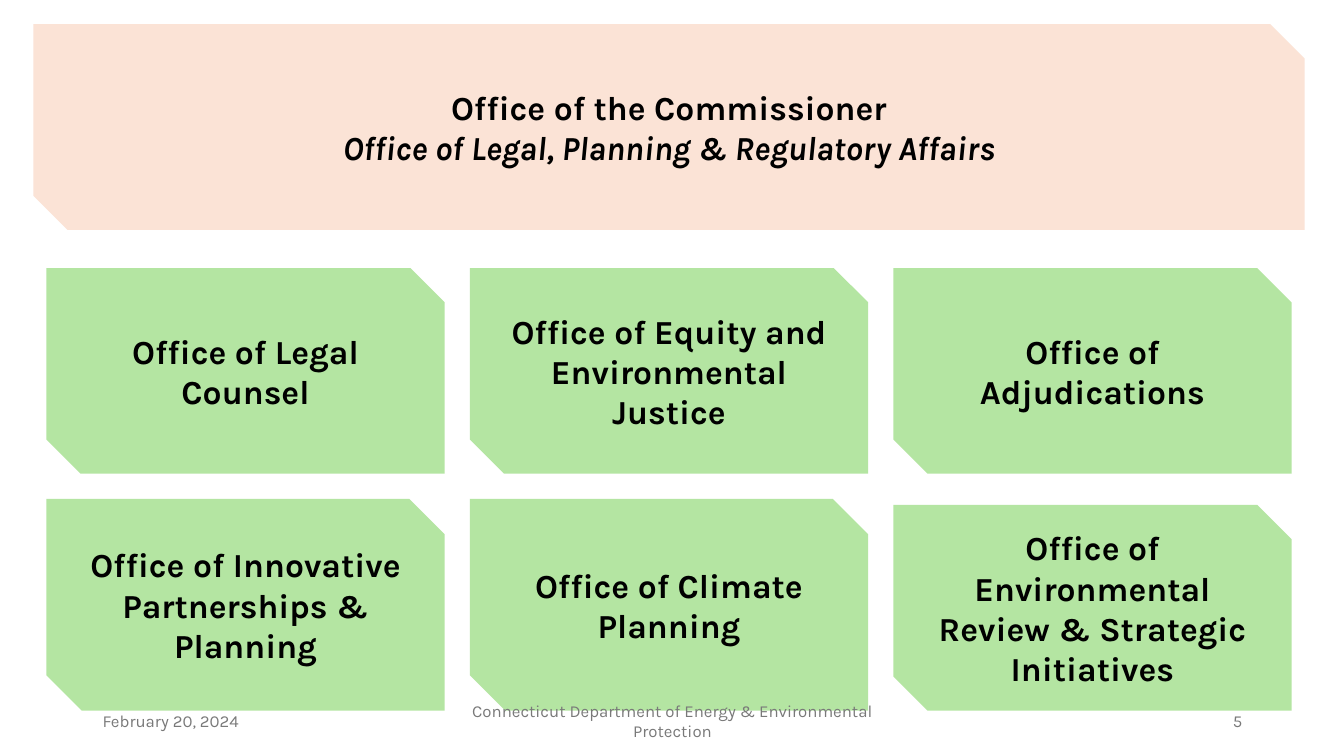
"""Build the organisation slide of the Commissioner's offices."""
from typing import NamedTuple

from pptx import Presentation
from pptx import util as u
from pptx.dml.color import RGBColor
from pptx.enum import shapes, text

PX = 9144
PEACH = RGBColor(0xFB, 0xE3, 0xD6)
GREEN = RGBColor(0xB4, 0xE5, 0xA2)
BLACK = RGBColor(0x00, 0x00, 0x00)
GREY = RGBColor(0x79, 0x79, 0x79)
FONT = "Karla"

COLUMN_LEFT, COLUMN_STEP, OFFICE_WIDTH = 46, 420, 395
FOOTER_TOP, FOOTER_HEIGHT = 695, 40


class Area(NamedTuple):
    left: int
    top: int
    width: int
    height: int

    def emu(self) -> list[u.Emu]:
        return [u.Emu(length * PX) for length in self]


class Office(NamedTuple):
    label: str
    column: int
    top: int
    height: int = 204


class FooterItem(NamedTuple):
    label: str
    left: int
    width: int
    align: text.PP_ALIGN


OFFICES = [
    Office("Office of Legal Counsel", 0, 266),
    Office("Office of Equity and Environmental Justice", 1, 266),
    Office("Office of Adjudications", 2, 266),
    Office("Office of Innovative Partnerships & Planning", 0, 495, 210),
    Office("Office of Climate Planning", 1, 495, 210),
    Office("Office of Environmental Review & Strategic Initiatives", 2, 501),
]

FOOTER = [
    FooterItem("February 20, 2024", 92, 300, text.PP_ALIGN.LEFT),
    FooterItem("Connecticut Department of Energy & Environmental Protection",
               442, 450, text.PP_ALIGN.CENTER),
    FooterItem("5", 942, 300, text.PP_ALIGN.RIGHT),
]


def write(paragraph, label: str, *, size: int = 24, color: RGBColor = BLACK,
          bold: bool = True, italic: bool = False,
          align: text.PP_ALIGN = text.PP_ALIGN.CENTER) -> None:
    paragraph.alignment = align
    run = paragraph.add_run()
    run.text = label
    run.font.name = FONT
    run.font.size = u.Pt(size)
    run.font.bold = bold
    run.font.italic = italic
    run.font.color.rgb = color


def add_box(slide, area: Area, fill: RGBColor):
    box = slide.shapes.add_shape(
        shapes.MSO_SHAPE.SNIP_2_DIAG_RECTANGLE, *area.emu())
    box.shadow.inherit = False
    box.fill.solid()
    box.fill.fore_color.rgb = fill
    box.line.fill.background()
    box.text_frame.word_wrap = True
    box.text_frame.vertical_anchor = text.MSO_ANCHOR.MIDDLE
    return box.text_frame


def add_commissioner(slide) -> None:
    banner = add_box(slide, Area(33, 24, 1261, 204), PEACH)
    write(banner.paragraphs[0], "Office of the Commissioner")
    write(banner.add_paragraph(),
          "Office of Legal, Planning & Regulatory Affairs", italic=True)


def add_office(slide, office: Office) -> None:
    left = COLUMN_LEFT + office.column * COLUMN_STEP
    area = Area(left, office.top, OFFICE_WIDTH, office.height)
    write(add_box(slide, area, GREEN).paragraphs[0], office.label)


def add_footer_item(slide, item: FooterItem) -> None:
    area = Area(item.left, FOOTER_TOP, item.width, FOOTER_HEIGHT)
    frame = slide.shapes.add_textbox(*area.emu()).text_frame
    frame.word_wrap = True
    frame.vertical_anchor = text.MSO_ANCHOR.MIDDLE
    write(frame.paragraphs[0], item.label, size=12, color=GREY, bold=False,
          align=item.align)


def main() -> None:
    deck = Presentation()
    deck.slide_width, deck.slide_height = u.Emu(1333 * PX), u.Emu(750 * PX)
    slide = deck.slides.add_slide(deck.slide_layouts[6])
    add_commissioner(slide)
    for office in OFFICES:
        add_office(slide, office)
    for item in FOOTER:
        add_footer_item(slide, item)
    deck.save("out.pptx")


if __name__ == "__main__":
    main()
